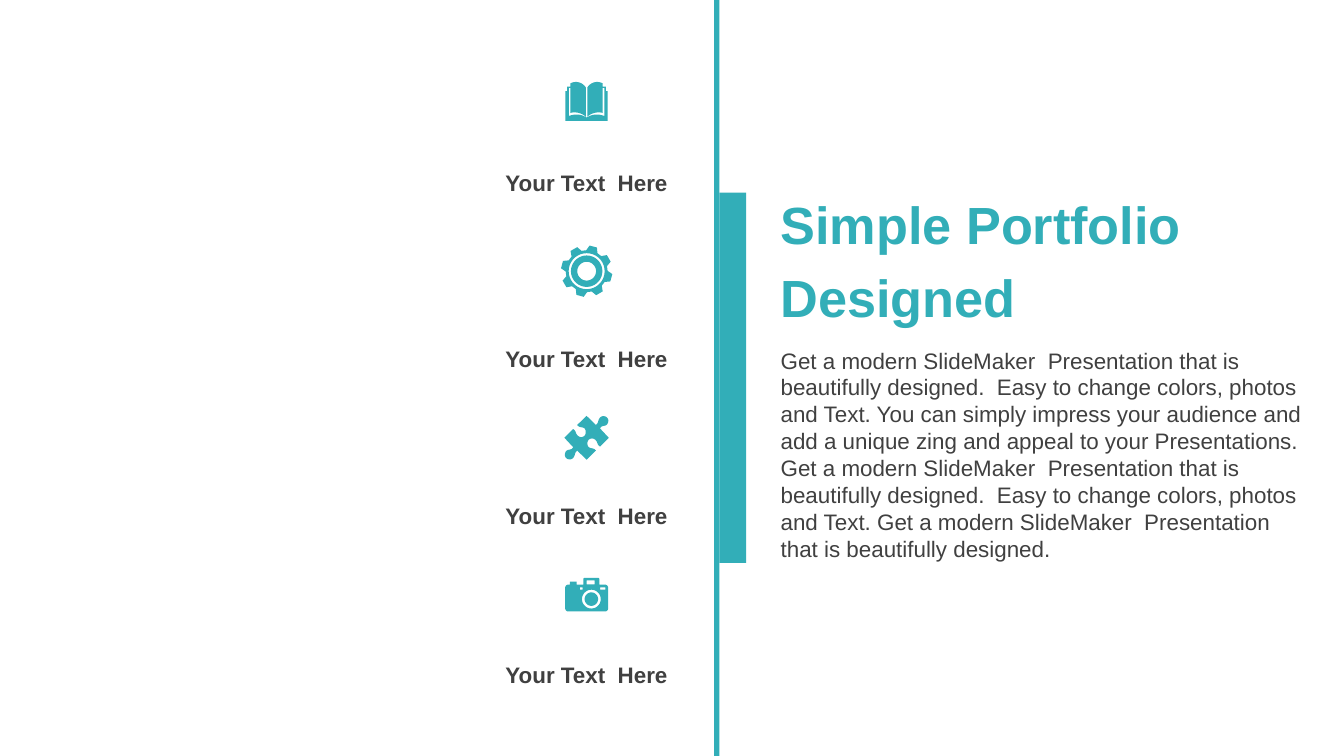
from math import cos, radians, sin

from pptx import Presentation
from pptx.dml.color import RGBColor
from pptx.enum.shapes import MSO_SHAPE
from pptx.enum.text import MSO_AUTO_SIZE, PP_ALIGN
from pptx.util import Inches, Pt

# Content
TITLE = ["Simple Portfolio", "Designed"]
BODY = (
    "Get a modern SlideMaker  Presentation that is beautifully designed.  "
    "Easy to change colors, photos and Text. You can simply impress your "
    "audience and add a unique zing and appeal to your Presentations. "
    "Get a modern SlideMaker  Presentation that is beautifully designed.  "
    "Easy to change colors, photos and Text. "
    "Get a modern SlideMaker  Presentation that is beautifully designed."
)
# Each feature: icon, row of the icon's centre, label, row of the label's top
FEATURES = [
    ("book", 7.55, "Your Text  Here", 12.1),
    ("gear", 20.18, "Your Text  Here", 25.2),
    ("puzzle", 32.58, "Your Text  Here", 36.9),
    ("camera", 44.25, "Your Text  Here", 48.7),
]

# Theme
THEME = {
    "accent": RGBColor(0x32, 0xAE, 0xB8),
    "text": RGBColor(0x40, 0x40, 0x40),
    "label": {"name": "Arial", "size": Pt(12), "bold": True},
    "title": {"name": "Arial", "size": Pt(28), "bold": True},
    "body": {"name": "Arial", "size": Pt(12), "bold": False},
    "title_gap": Pt(5.5),
}
GROWING = {"word_wrap": True, "auto_size": MSO_AUTO_SIZE.SHAPE_TO_FIT_TEXT}
FIXED = {"word_wrap": True, "auto_size": MSO_AUTO_SIZE.NONE}

# Grid of 100 columns, one cell is a tenth of an inch
COLUMNS, ROWS = 100, 56.25
CELL = Inches(0.1)
ICON_UNIT = CELL / 10
ICON_COLUMN = 43.65
LABEL_LEFT, LABEL_WIDTH, LABEL_HEIGHT = 35.65, 16, 3
TEXT_LEFT = 57.1
BARS = [(53.13, 0, 0.4, ROWS), (53.53, 14.33, 2, 27.55)]

# Icon outlines around their centres: pairs are lines, sixes are curves
BOOK_PAGE = [(0.6, -10.5), (2.5, -13.5, 7, -16, 12, -13.5), (12, 8.5),
             (8, 7.5, 4, 8.5, 0.6, 11.2)]
BOOK_COVER = [(0, 12), (4, 9.5, 8, 9, 13.2, 10.8), (13.2, -10), (12, -10),
              (12, -11), (14.4, -11), (14.4, -7.7), (15.7, -7.7),
              (15.7, 14.5), (0, 14.5)]
PUZZLE_HALF = [(15.3, -15), (16.5, -13.5, 16.5, -12, 15.3, -10),
               (13.5, -8, 11.5, -9.8, 10, -7), (16.5, 0), (10, 6.5),
               (7.5, 5, 8.5, 3.2, 6.5, 1.5), (5, 0.2, 3, 0.2, 1.5, 1.5),
               (0.3, 3, 0.3, 5.5, 1.5, 7), (4, 8.5, 4.5, 7, 7, 9.5),
               (0, 16.3), (-7, 9.5), (-9.5, 12, -8, 12.5, -10, 15),
               (-11.5, 16.5, -13.5, 16.5, -15.3, 15)]
CAMERA_BODY = [(-13.5, -7.5), (-12.5, -7.5), (-12.5, -9.7), (-7.5, -9.7),
               (-7.5, -7.5), (-2.5, -7.5), (-2.5, -11.5),
               (-2.5, -12, -2, -12.5, -1.5, -12.5), (8.5, -12.5),
               (9, -12.5, 9.5, -12, 9.5, -11.5), (9.5, -7.5), (13.5, -7.5),
               (15, -7.5, 16, -6.5, 16, -5), (16, 10),
               (16, 11.5, 15, 12.5, 13.5, 12.5), (-13.5, 12.5),
               (-15, 12.5, -16, 11.5, -16, 10), (-16, -5),
               (-16, -6.5, -15, -7.5, -13.5, -7.5)]
CAMERA_WINDOWS = [(0, -10.7, 6, 3), (-5, -5.5, 2, 1.8), (10, -5.5, 4, 1.8)]


def flatten(outline, steps=8):
    """Turn lines and cubic curves into a plain list of points."""
    points = [outline[0]]
    for segment in outline[1:]:
        if len(segment) == 2:
            points.append(segment)
            continue
        nodes = points[-1] + segment
        for step in range(1, steps + 1):
            t = step / steps
            weights = ((1 - t) ** 3, 3 * t * (1 - t) ** 2, 3 * t * t * (1 - t), t ** 3)
            points.append(tuple(
                sum(w * node for w, node in zip(weights, nodes[axis::2]))
                for axis in (0, 1)))
    return points


def flip(points, x_sign, y_sign):
    return [(x * x_sign, y * y_sign) for x, y in points]


def polar(radius, angle):
    return radius * cos(radians(angle)), radius * sin(radians(angle))


def circle(radius, x=0, y=0):
    ring = [polar(radius, angle) for angle in range(0, 360, 10)]
    return [(x + dx, y + dy) for dx, dy in ring]


def box(x, y, width, height):
    return [(x, y), (x + width, y), (x + width, y + height), (x, y + height)]


# Eight gear teeth, each with two outer and two root corners
TOOTH = [(15.6, -16), (19.2, -8.5), (19.2, 8.5), (15.6, 16)]
gear_rim = [polar(radius, tooth * 45 - 75 + angle)
            for tooth in range(8) for radius, angle in TOOTH]
book_half = [flatten(BOOK_PAGE), flatten(BOOK_COVER)]
puzzle_half = flatten(PUZZLE_HALF)
ICONS = {
    "book": book_half + [flip(part, -1, 1) for part in book_half],
    "gear": [gear_rim] + [circle(radius) for radius in (13.4, 11.7, 7)],
    "puzzle": [puzzle_half + flip(puzzle_half, -1, -1)],
    "camera": [flatten(CAMERA_BODY), circle(7, 3.5, 3.3), circle(5, 3.5, 3.3)]
    + [box(*window) for window in CAMERA_WINDOWS],
}


def cells(*values):
    return [round(value * CELL) for value in values]


def apply(target, values):
    for attribute, value in values.items():
        setattr(target, attribute, value)


def paint(shape):
    shape.shadow.inherit = False
    shape.fill.solid()
    shape.fill.fore_color.rgb = THEME["accent"]
    shape.line.fill.background()


def add_icon(shapes, contours, column, row):
    placed = [[(round(column * CELL + x * ICON_UNIT), round(row * CELL + y * ICON_UNIT))
               for x, y in contour] for contour in contours]
    builder = shapes.build_freeform(*placed[0][0])
    for index, contour in enumerate(placed):
        if index:
            builder.move_to(*contour[0])
        builder.add_line_segments(contour[1:], close=True)
    paint(builder.convert_to_shape())


def add_text(shapes, area, lines, frame_values, font, color, align=PP_ALIGN.LEFT):
    frame = shapes.add_textbox(*cells(*area)).text_frame
    apply(frame, frame_values)
    for index, line in enumerate(lines):
        paragraph = frame.add_paragraph() if index else frame.paragraphs[0]
        paragraph.alignment = align
        if index:
            paragraph.space_before = THEME["title_gap"]
        run = paragraph.add_run()
        run.text = line
        apply(run.font, THEME[font])
        run.font.color.rgb = THEME[color]


deck = Presentation()
deck.slide_width, deck.slide_height = cells(COLUMNS, ROWS)
shapes = deck.slides.add_slide(deck.slide_layouts[6]).shapes

# Divider and accent bar
for bar in BARS:
    paint(shapes.add_shape(MSO_SHAPE.RECTANGLE, *cells(*bar)))

# Icons with their labels
for icon, icon_row, label, label_row in FEATURES:
    add_icon(shapes, ICONS[icon], ICON_COLUMN, icon_row)
    add_text(shapes, (LABEL_LEFT, label_row, LABEL_WIDTH, LABEL_HEIGHT), [label],
             GROWING, "label", "text", PP_ALIGN.CENTER)

# Title and body
add_text(shapes, (TEXT_LEFT, 13.8, 37.8, 10.6), TITLE, FIXED, "title", "accent")
add_text(shapes, (TEXT_LEFT, 25.3, 40.9, 17.2), [BODY], GROWING, "body", "text")

deck.save("out.pptx")
